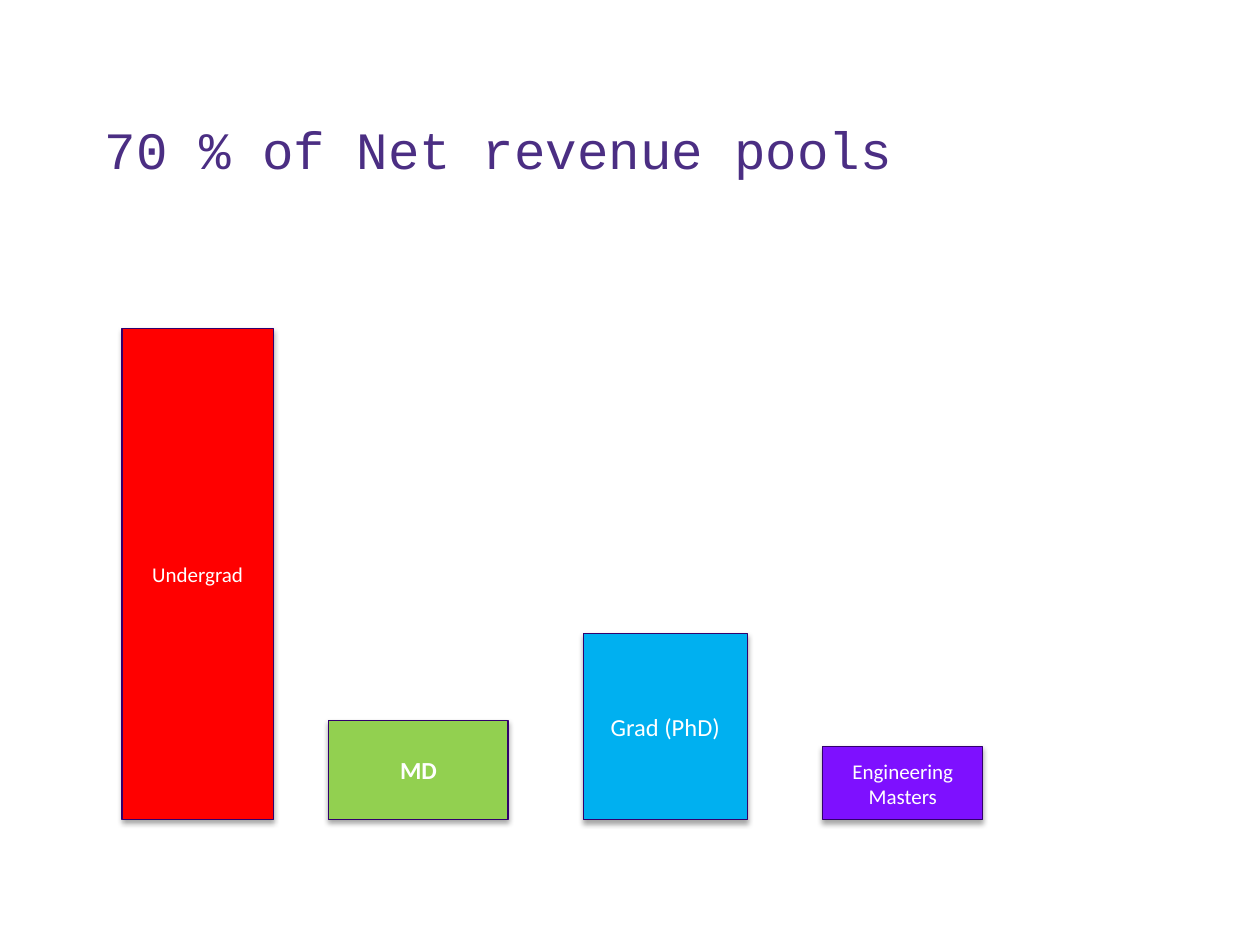
from dataclasses import dataclass

from lxml.etree import SubElement
from pptx import Presentation
from pptx.dml.color import RGBColor
from pptx.enum.shapes import MSO_SHAPE as Shape
from pptx.enum.text import MSO_ANCHOR as Anchor, PP_ALIGN as Align
from pptx.oxml.ns import qn
from pptx.shapes.autoshape import Shape as AutoShape
from pptx.slide import Slide
from pptx.util import Pt

COLORS = {
    "title": "4B2E83",
    "outline": "32006D",
    "label": "FFFFFF",
    "shadow": "000000",
    "red": "FF0000",
    "blue": "00B0F0",
    "green": "92D050",
    "violet": "7E10FF",
}
BASELINE = 468.5  # common bottom edge of the bars


@dataclass
class Bar:
    label: str
    left: float
    width: float
    height: float
    color: str
    size: int = 12
    bold: bool = False


BARS = [
    Bar("Undergrad", 69.8, 86.4, 280.8, "red"),
    Bar("Grad (PhD)", 333.4, 93.6, 106.6, "blue", size=14),
    Bar("MD", 187.9, 102.5, 56.9, "green", size=14, bold=True),
    Bar("Engineering Masters", 470.2, 91.4, 41.8, "violet"),
]


def rgb(name: str) -> RGBColor:
    return RGBColor.from_string(COLORS[name])


def add_shadow(box: AutoShape) -> None:
    """Give the box a soft shadow that falls straight down."""
    box.shadow.inherit = False
    effects = box._element.spPr.find(qn("a:effectLst"))
    shadow = SubElement(effects, qn("a:outerShdw"), blurRad=str(Pt(3.1)),
                        dist=str(Pt(1.8)), dir="5400000", rotWithShape="0")
    color = SubElement(shadow, qn("a:srgbClr"), val=COLORS["shadow"])
    SubElement(color, qn("a:alpha"), val="35000")


def add_title(page: Slide, text: str) -> None:
    title = page.shapes.title
    title.left, title.top, title.width, title.height = (
        Pt(52.6), Pt(12.2), Pt(644.4), Pt(95))
    title.text_frame.text = text
    title.text_frame.vertical_anchor = Anchor.BOTTOM
    para = title.text_frame.paragraphs[0]
    para.alignment = Align.LEFT
    para.line_spacing = 0.9
    font = para.runs[0].font
    font.name, font.size = "Courier New", Pt(30)
    font.color.rgb = rgb("title")


def add_bar(page: Slide, bar: Bar) -> None:
    box = page.shapes.add_shape(
        Shape.RECTANGLE, Pt(bar.left), Pt(BASELINE - bar.height),
        Pt(bar.width), Pt(bar.height))
    box.fill.solid()
    box.fill.fore_color.rgb = rgb(bar.color)
    box.line.color.rgb = rgb("outline")
    box.line.width = Pt(0.75)
    add_shadow(box)

    box.text_frame.text = bar.label
    box.text_frame.word_wrap = True
    box.text_frame.vertical_anchor = Anchor.MIDDLE
    para = box.text_frame.paragraphs[0]
    para.alignment = Align.CENTER
    font = para.runs[0].font
    font.name, font.size, font.bold = "Calibri", Pt(bar.size), bar.bold
    font.color.rgb = rgb("label")


def main() -> None:
    deck = Presentation()
    deck.slide_width, deck.slide_height = Pt(720), Pt(540)
    page = deck.slides.add_slide(deck.slide_layouts.get_by_name("Title Only"))

    # Heading
    add_title(page, "70 % of Net revenue pools")

    # Revenue bars
    for bar in BARS:
        add_bar(page, bar)

    deck.save("out.pptx")


if __name__ == "__main__":
    main()
